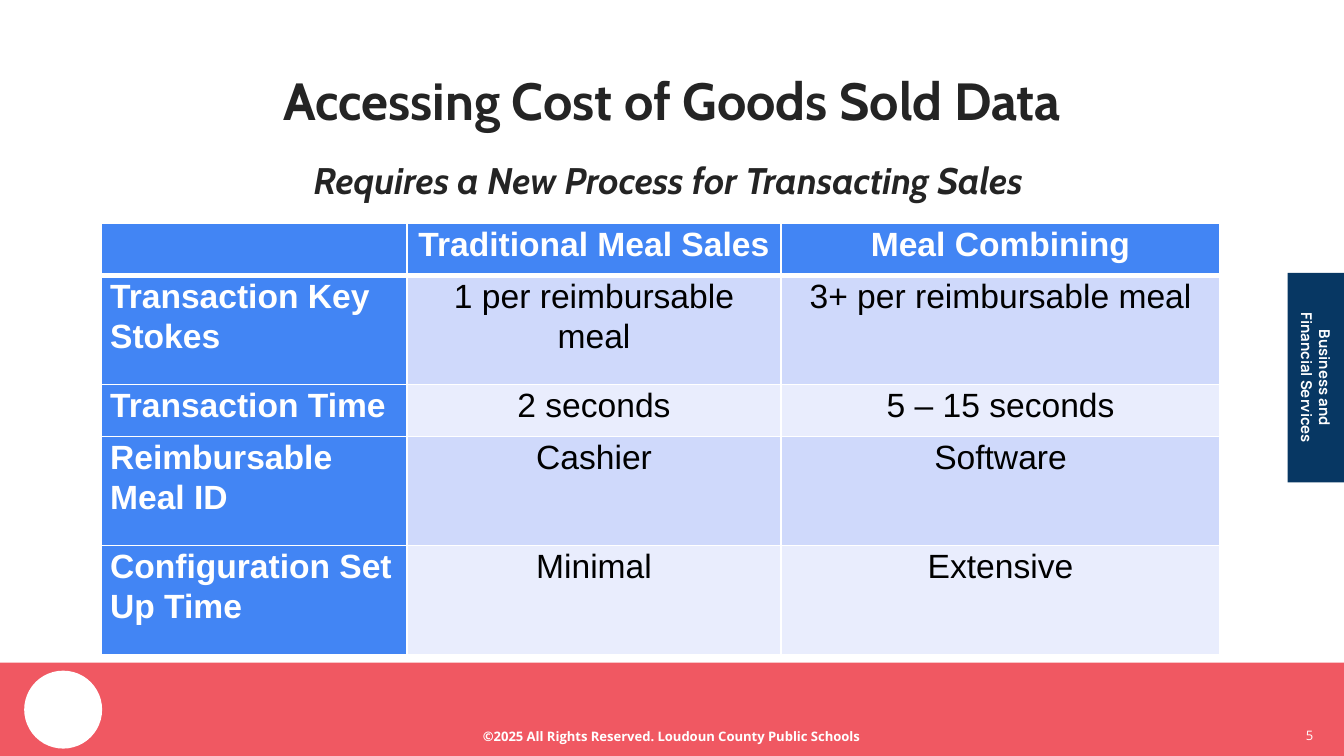
import pptx
import pptx.util
import pptx.dml.color
import pptx.enum.shapes
import pptx.enum.text
import pptx.oxml
import pptx.oxml.ns

Inches, Pt = pptx.util.Inches, pptx.util.Pt
RGB = pptx.dml.color.RGBColor.from_string
ALIGN = pptx.enum.text.PP_ALIGN
ANCHOR = pptx.enum.text.MSO_ANCHOR
SHAPE = pptx.enum.shapes.MSO_SHAPE

COLORS = {
    "white": "FFFFFF", "coral": "F05862", "navy": "073763", "ink": "242424",
    "black": "000000", "header": "4285F4", "odd": "CFD9FB", "even": "E9EDFD",
}


def write(frame, lines, align, color, **font):
    """Fill a text frame, one paragraph per line."""
    frame.word_wrap = True
    for number, line in enumerate(lines):
        para = frame.add_paragraph() if number else frame.paragraphs[0]
        para.alignment = align
        span = para.add_run()
        span.text = line
        span.font.color.rgb = RGB(COLORS[color])
        for name, value in font.items():
            setattr(span.font, name, value)


def draw_borders(cell, widths):
    """Add white borders; widths maps L, R, T and B to points."""
    properties = cell._tc.get_or_add_tcPr()
    for side, width in widths.items():
        properties.append(pptx.oxml.parse_xml(
            f'<a:ln{side} {pptx.oxml.ns.nsdecls("a")} w="{Pt(width)}"><a:solidFill>'
            f'<a:srgbClr val="{COLORS["white"]}"/></a:solidFill></a:ln{side}>'))


deck = pptx.Presentation()
deck.slide_width = Inches(10)
deck.slide_height = deck.slide_width * 9 // 16
page = deck.slides.add_slide(deck.slide_layouts[6])

# Footer band, badge and side tab
for kind, color, area in [
    (SHAPE.RECTANGLE, "coral", (0, 4.93, 10, 0.7)),
    (SHAPE.OVAL, "white", (0.18, 4.99, 0.58, 0.58)),
    (SHAPE.RECTANGLE, "navy", (9.58, 2.03, 0.92, 1.56)),
]:
    shape = page.shapes.add_shape(kind, *map(Inches, area))
    shape.shadow.inherit = False
    shape.fill.solid()
    shape.fill.fore_color.rgb = RGB(COLORS[color])
    shape.line.fill.background()

# Headings, footer, page number and side label
small = {"name": "Open Sans", "size": Pt(7)}
heading = {"name": "Cabin", "bold": True}
for area, lines, align, anchor, rotation, color, font in [
    ((0.34, 0.28, 9.32, 0.92), ["Accessing Cost of Goods Sold Data"],
     ALIGN.CENTER, ANCHOR.MIDDLE, 0, "ink", {**heading, "size": Pt(28)}),
    ((0.31, 1.16, 9.32, 0.35), ["Requires a New Process for Transacting Sales"],
     ALIGN.CENTER, ANCHOR.MIDDLE, 0, "ink",
     {**heading, "size": Pt(19.8), "italic": True}),
    ((3.37, 5.38, 3.25, 0.19),
     ["©2025 All Rights Reserved. Loudoun County Public Schools"],
     ALIGN.CENTER, ANCHOR.MIDDLE, 0, "white", {**small, "bold": True}),
    ((9.27, 5.26, 0.6, 0.43), ["5"],
     ALIGN.RIGHT, ANCHOR.MIDDLE, 0, "white", small),
    ((9.14, 2.67, 1.49, 0.28), ["Business and", "Financial Services"],
     ALIGN.CENTER, ANCHOR.TOP, 90, "white",
     {"name": "Manrope", "size": Pt(8), "bold": True}),
]:
    box = page.shapes.add_textbox(*map(Inches, area))
    box.rotation = rotation
    frame = box.text_frame
    frame.vertical_anchor = anchor
    for side in ("left", "right", "top", "bottom"):
        setattr(frame, f"margin_{side}", Inches(0.1))
    write(frame, lines, align, color, **font)

# Comparison table
rows = [
    ("", "Traditional Meal Sales", "Meal Combining"),
    ("Transaction Key Stokes", "1 per reimbursable meal", "3+ per reimbursable meal"),
    ("Transaction Time", "2 seconds", "5 – 15 seconds"),
    ("Reimbursable Meal ID", "Cashier", "Software"),
    ("Configuration Set Up Time", "Minimal", "Extensive"),
]
widths = [2.28, 2.78, 3.27]
heights = [0.39, 0.81, 0.39, 0.81, 0.81]
table = page.shapes.add_table(
    len(rows), len(widths), Inches(0.75), Inches(1.66),
    Inches(sum(widths)), Inches(sum(heights))).table
for column, width in zip(table.columns, widths):
    column.width = Inches(width)

for r, texts in enumerate(rows):
    table.rows[r].height = Inches(heights[r])
    for c, text in enumerate(texts):
        cell = table.cell(r, c)
        cell.margin_left = cell.margin_right = Inches(0.07)
        cell.margin_top = cell.margin_bottom = 0
        draw_borders(cell, {"L": 1, "R": 1, "T": 3 if r == 1 else 1,
                            "B": 3 if r == 0 else 1})
        is_header = r == 0 or c == 0
        cell.fill.solid()
        cell.fill.fore_color.rgb = RGB(
            COLORS["header" if is_header else "odd" if r % 2 else "even"])
        if text:
            write(cell.text_frame, [text], ALIGN.CENTER if c else ALIGN.LEFT,
                  "white" if is_header else "black",
                  name="Arial", size=Pt(18), bold=is_header)
            para = cell.text_frame.paragraphs[0]
            para.line_spacing, para.space_after = 1.07, Pt(8)

deck.save("out.pptx")
